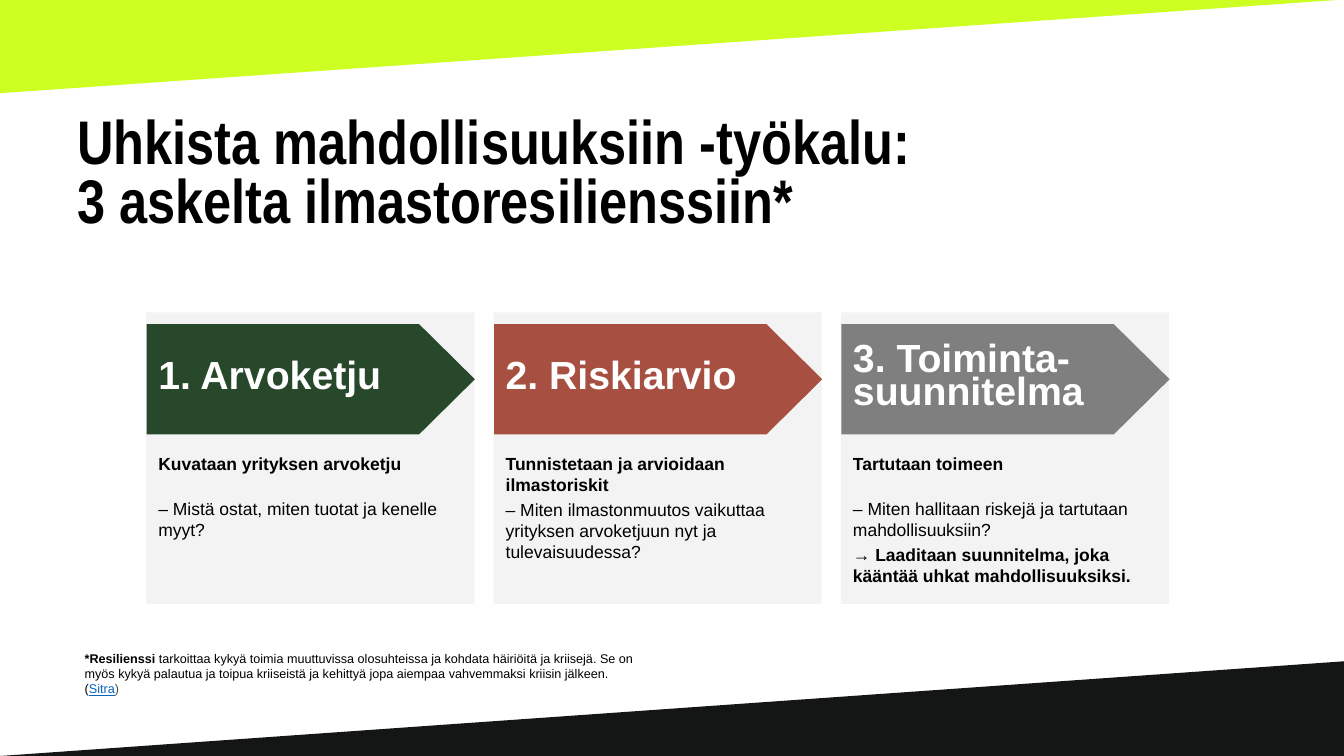
"""Build the slide on the three steps to climate resilience."""
from dataclasses import dataclass

from pptx import Presentation
from pptx.dml.color import RGBColor
from pptx.enum.shapes import MSO_SHAPE as Shape
from pptx.enum.text import MSO_ANCHOR as Anchor
from pptx.util import Inches, Pt


@dataclass(frozen=True)
class Theme:
    lime: str = "CEFF23"
    dark: str = "141515"
    panel: str = "F3F3F3"
    green: str = "28482B"
    red: str = "A75042"
    gray: str = "7F7F7F"
    black: str = "000000"
    white: str = "FFFFFF"
    link: str = "0563C1"
    olive: str = "4A4E44"
    title_font: str = "Arial Narrow"
    body_font: str = "Arial"
    title_size: float = 88
    step_size: float = 56
    body_size: float = 25
    note_size: float = 18


theme = Theme()


def add_text(frame, text, *, size, color=theme.black, font=theme.body_font, bold=False,
             underline=False, new=False, before=0, spacing=1.0):
    paragraph = frame.add_paragraph() if new else frame.paragraphs[-1]
    if before:
        paragraph.space_before = Pt(before)
    paragraph.line_spacing = spacing
    run = paragraph.add_run()
    run.text = text
    run.font.size = Pt(size)
    run.font.name = font
    run.font.bold = bold
    run.font.underline = underline
    run.font.color.rgb = RGBColor.from_string(color)


def add_frame(slide, box, insets, anchor=Anchor.TOP):
    frame = slide.shapes.add_textbox(*map(Inches, box)).text_frame
    frame.word_wrap = True
    frame.vertical_anchor = anchor
    (frame.margin_left, frame.margin_top,
     frame.margin_right, frame.margin_bottom) = map(Inches, insets)
    return frame


presentation = Presentation()
presentation.slide_width = Inches(26.66)
presentation.slide_height = Inches(15)
slide = presentation.slides.add_slide(presentation.slide_layouts[6])

bands = [
    (theme.lime, [(0, -0.02), (0, 1.85), (26.67, -0.01)]),
    (theme.dark, [(0, 15), (26.67, 15), (26.67, 13.12)]),
]
for color, corners in bands:
    start, *others = [(Inches(x), Inches(y)) for x, y in corners]
    builder = slide.shapes.build_freeform(*start, scale=1.0)
    builder.add_line_segments(others, close=True)
    band = builder.convert_to_shape()
    band.shadow.inherit = False
    band.fill.solid()
    band.fill.fore_color.rgb = RGBColor.from_string(color)
    band.line.fill.background()

title = add_frame(slide, (1.53, 2.32, 23.04, 2.32), (0, 0, 0, 0))
for index, line in enumerate(["Uhkista mahdollisuuksiin -työkalu:", "3 askelta ilmastoresilienssiin*"]):
    add_text(title, line, size=theme.title_size, font=theme.title_font, bold=True,
             new=index > 0, spacing=0.8)

steps = [
    ("1. Arvoketju", theme.green, [
        ("Kuvataan yrityksen arvoketju", True, 0),
        ("– Mistä ostat, miten tuotat ja kenelle myyt?", False, 35),
    ]),
    ("2. Riskiarvio", theme.red, [
        ("Tunnistetaan ja arvioidaan ilmastoriskit", True, 0),
        ("– Miten ilmastonmuutos vaikuttaa yrityksen arvoketjuun nyt ja tulevaisuudessa?", False, 6),
    ]),
    ("3. Toiminta- suunnitelma", theme.gray, [
        ("Tartutaan toimeen", True, 0),
        ("– Miten hallitaan riskejä ja tartutaan mahdollisuuksiin?", False, 35),
        ("→ Laaditaan suunnitelma, joka kääntää uhkat mahdollisuuksiksi.", True, 6),
    ]),
]
first_left, pitch, width = 2.9, 6.89, 6.51
for column, (heading, color, lines) in enumerate(steps):
    left = first_left + column * pitch
    panel = slide.shapes.add_shape(
        Shape.RECTANGLE, Inches(left), Inches(6.2), Inches(width), Inches(5.78))
    arrow = slide.shapes.add_shape(
        Shape.PENTAGON, Inches(left + 0.01), Inches(6.43), Inches(width), Inches(2.19))
    arrow.adjustments[0] = 0.506
    for shape, fill in ((panel, theme.panel), (arrow, color)):
        shape.shadow.inherit = False
        shape.fill.solid()
        shape.fill.fore_color.rgb = RGBColor.from_string(fill)
        shape.line.fill.background()

    label = add_frame(slide, (left, 6.51, 6.17, 2.03), (0.24, 0, 0, 0), Anchor.MIDDLE)
    add_text(label, heading, size=theme.step_size, color=theme.white, bold=True, spacing=0.7)
    body = add_frame(slide, (left, 8.86, width, 2.99), (0.24, 0.12, 0.24, 0.12))
    for index, (line, bold, before) in enumerate(lines):
        add_text(body, line, size=theme.body_size, bold=bold, new=index > 0, before=before)

note = add_frame(slide, (1.53, 12.76, 11.19, 0.95), (0.15, 0.15, 0.15, 0.15))
add_text(note, "*Resilienssi ", size=theme.note_size, bold=True)
add_text(note, "tarkoittaa kykyä toimia muuttuvissa olosuhteissa ja kohdata häiriöitä ja kriisejä. "
         "Se on myös kykyä palautua ja toipua kriiseistä ja kehittyä jopa aiempaa vahvemmaksi "
         "kriisin jälkeen. (", size=theme.note_size)
add_text(note, "Sitra", size=theme.note_size, color=theme.link, underline=True)
add_text(note, ")", size=theme.note_size, color=theme.olive)

presentation.save("out.pptx")
